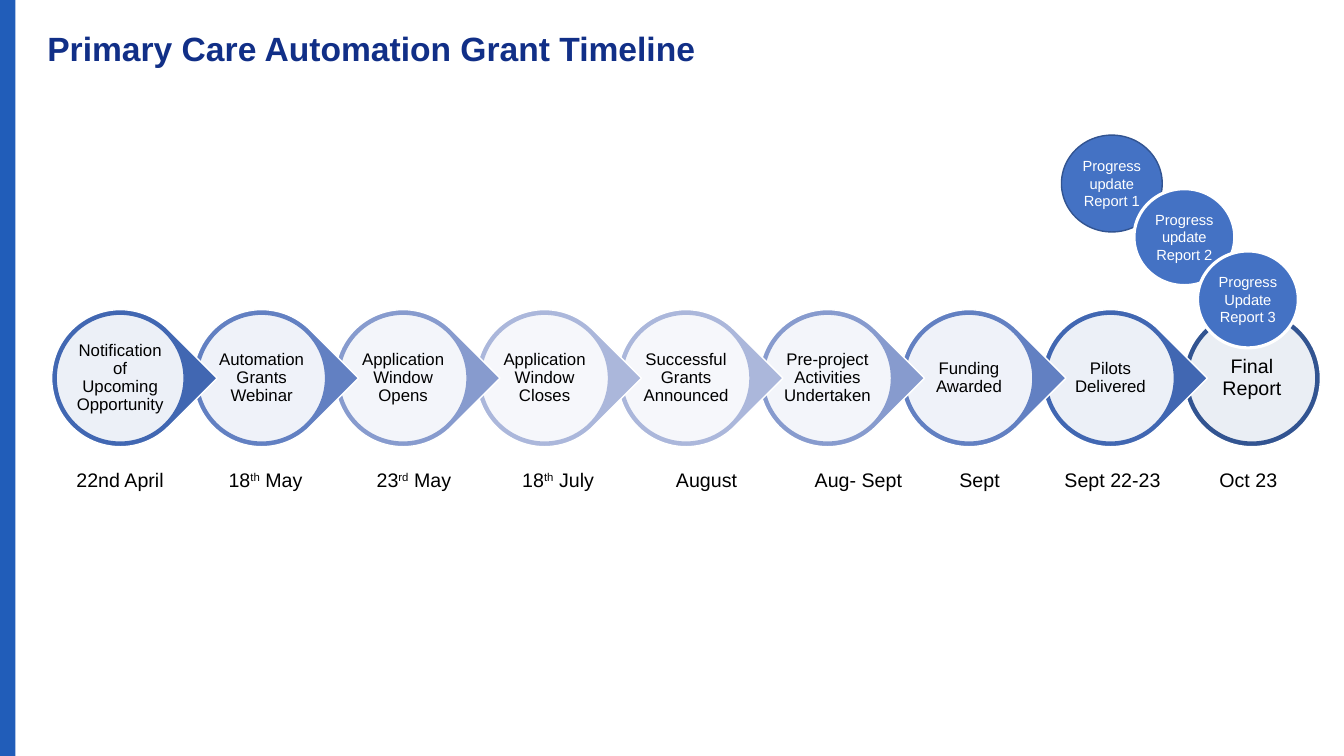
from dataclasses import dataclass

from lxml import etree
from pptx import Presentation
from pptx.dml.color import RGBColor
from pptx.enum.shapes import MSO_SHAPE
from pptx.enum.text import MSO_ANCHOR, PP_ALIGN
from pptx.oxml.ns import qn
from pptx.util import Pt

OVAL, TEARDROP, RECTANGLE = MSO_SHAPE.OVAL, MSO_SHAPE.TEAR, MSO_SHAPE.RECTANGLE
LEFT, CENTER = PP_ALIGN.LEFT, PP_ALIGN.CENTER
TOP, MIDDLE = MSO_ANCHOR.TOP, MSO_ANCHOR.MIDDLE


@dataclass
class Theme:
    font: str = "Arial"
    bar: str = "215DB9"
    title: str = "112F87"
    text: str = "000000"
    white: str = "FFFFFF"
    report: str = "4472C4"
    dark: str = "325491"
    shades: tuple = ("4167B2", "6280C2", "879BCE", "ABB7DB")
    title_size: float = 24
    large_size: float = 14
    step_size: float = 12
    report_size: float = 10.5


theme = Theme()


def add_filled(kind, left, top, width, height, fill, line, line_width=1):
    shape = page.shapes.add_shape(kind, Pt(left), Pt(top), Pt(width), Pt(height))
    shape.shadow.inherit = False
    shape.fill.solid()
    shape.fill.fore_color.rgb = RGBColor.from_string(fill)
    shape.line.color.rgb = RGBColor.from_string(line)
    shape.line.width = Pt(line_width)
    return shape


def format_text(frame, size, color, align, anchor, inset_x, inset_y):
    frame.word_wrap = True
    frame.vertical_anchor = anchor
    frame.margin_left = frame.margin_right = Pt(inset_x)
    frame.margin_top = frame.margin_bottom = Pt(inset_y)
    for para in frame.paragraphs:
        para.alignment = align
        for span in para.runs:
            span.font.name = theme.font
            span.font.size = Pt(size)
            span.font.color.rgb = RGBColor.from_string(color)


deck = Presentation()
deck.slide_width, deck.slide_height = Pt(960), Pt(540)
page = deck.slides.add_slide(deck.slide_layouts[5])

# Side bar
bar = add_filled(RECTANGLE, 0, 0, 11, 540, theme.bar, theme.bar)
bar.line.fill.background()

# Title
title = page.shapes.title
title.left, title.top, title.width, title.height = Pt(26.6), Pt(16), Pt(683), Pt(69)
title.text_frame.text = "Primary Care Automation Grant Timeline"
format_text(title.text_frame, theme.title_size, theme.title, LEFT, TOP, 7.2, 7.2)
title.text_frame.paragraphs[0].line_spacing = 0.9
title.text_frame.paragraphs[0].runs[0].font.bold = True

# Chain of steps, drawn from the last so each point overlaps the next circle
steps = [
    "Notification of Upcoming Opportunity",
    "Automation Grants Webinar",
    "Application Window Opens",
    "Application Window Closes",
    "Successful Grants Announced",
    "Pre-project Activities Undertaken",
    "Funding Awarded",
    "Pilots Delivered",
    "Final Report",
]
colors = theme.shades + theme.shades[::-1] + (theme.dark,)
last = len(steps) - 1
first_left, pitch, chain_top = 36.9, 101.05, 221.2
outer, inner, label = 97.9, 91.4, 65.5
ring_gap, label_gap = (outer - inner) / 2, (outer - label) / 2

for index in range(last, -1, -1):
    left = first_left + index * pitch
    kind = OVAL if index == last else TEARDROP
    marker = add_filled(kind, left, chain_top, outer, outer, colors[index], theme.white)
    marker.rotation = 0 if index == last else 45

    disc = add_filled(OVAL, left + ring_gap, chain_top + ring_gap, inner, inner,
                      theme.white, colors[index])
    fill_color = disc.fill._xPr.find(qn("a:solidFill"))[0]
    etree.SubElement(fill_color, qn("a:alpha"), val="90000")

    box = page.shapes.add_textbox(Pt(left + label_gap), Pt(chain_top + label_gap),
                                  Pt(label), Pt(label))
    box.text_frame.text = steps[index]
    size = theme.large_size if index == last else theme.step_size
    format_text(box.text_frame, size, theme.text, CENTER, MIDDLE, 1.2, 1.2)
    box.text_frame.paragraphs[0].line_spacing = 0.9

# Dates: left edge and text parts, the second part being raised
dates = [
    (47.5, ["22nd April"]),
    (144, ["18", "th", " May"]),
    (250, ["23", "rd", " May"]),
    (353, ["18", "th", " July"]),
    (459, ["August"]),
    (567.5, ["Aug- Sept"]),
    (654, ["Sept"]),
    (749, ["Sept 22-23"]),
    (846, ["Oct 23"]),
]
for index, (left, parts) in enumerate(dates):
    box = page.shapes.add_textbox(Pt(left), Pt(330.5), Pt(91.4), Pt(24.5))
    para = box.text_frame.paragraphs[0]
    for position, part in enumerate(parts):
        span = para.add_run()
        span.text = part
        if position == 1:
            span.font._element.set("baseline", "30000")
    format_text(box.text_frame, theme.large_size, theme.text,
                CENTER if index else LEFT, TOP, 7.2, 3.6)

# Progress reports
reports = [
    (758.2, 96.5, "update Report 1", theme.dark, 1),
    (810, 134.8, "Progress\nupdate Report 2", theme.white, 2.25),
    (855.4, 179.3, "Progress\nUpdate Report 3", theme.white, 2.25),
]
for left, top, text, line, line_width in reports:
    report = add_filled(OVAL, left, top, 72, 69.2, theme.report, line, line_width)
    report.text_frame.text = text if "\n" in text else "Progress\n" + text
    format_text(report.text_frame, theme.report_size, theme.white, CENTER, MIDDLE, 0, 0)

deck.save("out.pptx")
